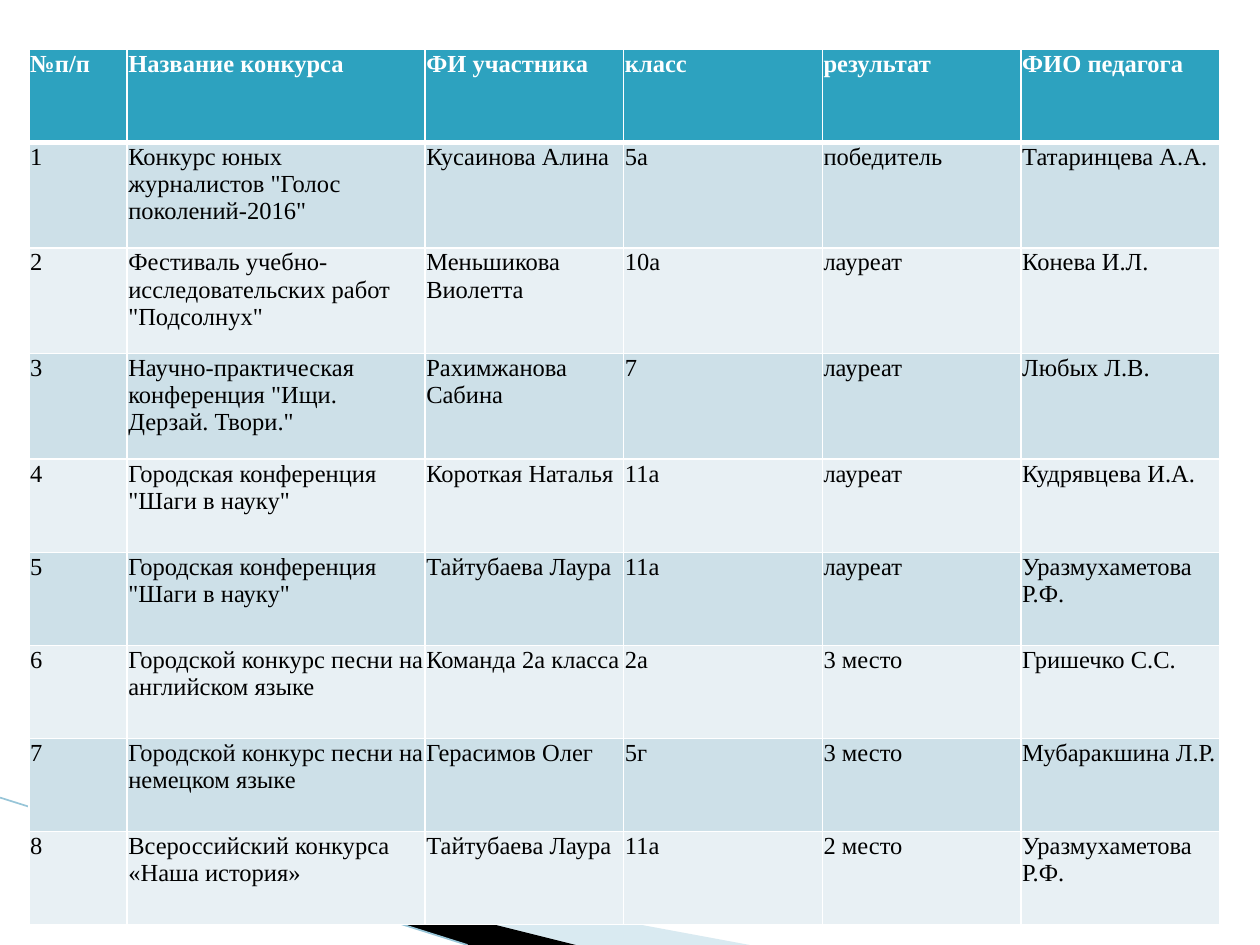
from lxml.etree import SubElement
from pptx import Presentation
from pptx.dml.color import RGBColor
from pptx.enum.shapes import MSO_CONNECTOR
from pptx.oxml.ns import qn
from pptx.util import Inches, Pt

WHITE = RGBColor(0xFF, 0xFF, 0xFF)
BLACK = RGBColor(0, 0, 0)
HEADER_TEAL = RGBColor(0x2D, 0xA2, 0xBF)
BANDS = (RGBColor(0xCD, 0xE0, 0xE8), RGBColor(0xE8, 0xF0, 0xF4))
WEDGE_BLUE = RGBColor(0xA0, 0xCB, 0xDC)
EDGE_BLUE = RGBColor(0x97, 0xC5, 0xD8)

COLUMN_WIDTHS = (0.78, 2.37, 1.58, 1.58, 1.58, 1.58)
ROW_HEIGHTS = (0.74,) + (0.84,) * 3 + (0.74,) * 5
HEADINGS = ("№п/п", "Название конкурса", "ФИ участника", "класс", "результат", "ФИО педагога")
RESULTS = (
    ('Конкурс юных журналистов "Голос поколений-2016"', "Кусаинова Алина", "5а", "победитель", "Татаринцева А.А."),
    ('Фестиваль учебно-исследовательских работ "Подсолнух"', "Меньшикова Виолетта", "10а", "лауреат", "Конева И.Л."),
    ('Научно-практическая конференция "Ищи. Дерзай. Твори."', "Рахимжанова Сабина", "7", "лауреат", "Любых Л.В."),
    ('Городская конференция "Шаги в науку"', "Короткая Наталья", "11а", "лауреат", "Кудрявцева И.А."),
    ('Городская конференция "Шаги в науку"', "Тайтубаева Лаура", "11а", "лауреат", "Уразмухаметова Р.Ф."),
    ("Городской конкурс песни на английском языке", "Команда 2а класса", "2а", "3 место", "Гришечко С.С."),
    ("Городской конкурс песни на немецком языке", "Герасимов Олег", "5г", "3 место", "Мубаракшина Л.Р."),
    ("Всероссийский конкурса «Наша история»", "Тайтубаева Лаура", "11а", "2 место", "Уразмухаметова Р.Ф."),
)


def add_wedge(slide, left, top, points, color, opacity=None):
    corners = [(left + Inches(x), top + Inches(y)) for x, y in points]
    builder = slide.shapes.build_freeform(*corners[0])
    builder.add_line_segments(corners[1:], close=True)
    wedge = builder.convert_to_shape()
    wedge.shadow.inherit = False
    wedge.line.fill.background()
    wedge.fill.solid()
    wedge.fill.fore_color.rgb = color
    if opacity is not None:
        tint = wedge.fill._xPr.find(qn("a:solidFill"))[0]
        SubElement(tint, qn("a:alpha"), val=str(opacity * 1000))


def add_corner_decoration(slide, left, top, width, height):
    base = height / Inches(1)
    add_wedge(slide, left, top, [(0.55, 0.17), (width / Inches(1), base), (4.56, base)], WEDGE_BLUE, 40)
    add_wedge(slide, left, top, [(0.53, 0.16), (4.57, base), (3.72, base)], BLACK)
    edge = slide.shapes.add_connector(
        MSO_CONNECTOR.STRAIGHT, left, top, left + Inches(3.71), top + height)
    edge.line.color.rgb = EDGE_BLUE
    edge.line.width = Pt(0.95)
    SubElement(edge._element.spPr, qn("a:effectLst"))


def set_borders(cell, top_width, bottom_width):
    properties = cell._tc.get_or_add_tcPr()
    for side, points in zip("LRTB", (1, 1, top_width, bottom_width)):
        border = SubElement(properties, qn(f"a:ln{side}"), w=str(Pt(points)))
        fill = SubElement(border, qn("a:solidFill"))
        SubElement(fill, qn("a:srgbClr"), val=str(WHITE))


def format_cell(cell, text, row):
    is_header = row == 0
    cell.margin_left = cell.margin_top = cell.margin_right = Inches(0.01)
    cell.margin_bottom = 0
    set_borders(cell, 3 if row == 1 else 1, 3 if is_header else 1)
    cell.fill.solid()
    cell.fill.fore_color.rgb = HEADER_TEAL if is_header else BANDS[(row - 1) % 2]
    cell.text_frame.text = text
    font = cell.text_frame.paragraphs[0].runs[0].font
    font.name = "Times New Roman"
    font.size = Pt(14)
    font.bold = is_header
    font.color.rgb = WHITE if is_header else BLACK


def add_results_table(slide, left, top, width, height):
    rows = [HEADINGS] + [(str(number), *entry) for number, entry in enumerate(RESULTS, 1)]
    table = slide.shapes.add_table(len(rows), len(HEADINGS), left, top, width, height).table
    for column, share in zip(table.columns, COLUMN_WIDTHS):
        column.width = int(width * share / sum(COLUMN_WIDTHS))
    for table_row, share in zip(table.rows, ROW_HEIGHTS):
        table_row.height = int(height * share / sum(ROW_HEIGHTS))
    for row, texts in enumerate(rows):
        for column, text in enumerate(texts):
            format_cell(table.cell(row, column), text, row)


def main():
    presentation = Presentation()
    presentation.slide_width = Inches(10)
    presentation.slide_height = Inches(7.5)
    slide = presentation.slides.add_slide(presentation.slide_layouts[6])
    slide.background.fill.solid()
    slide.background.fill.fore_color.rgb = WHITE
    add_corner_decoration(slide, Inches(0), Inches(6.33), Inches(5.95), Inches(1.17))
    add_results_table(slide, Inches(0.23), Inches(0.39), Inches(9.45), Inches(6.95))
    presentation.save("out.pptx")


if __name__ == "__main__":
    main()
